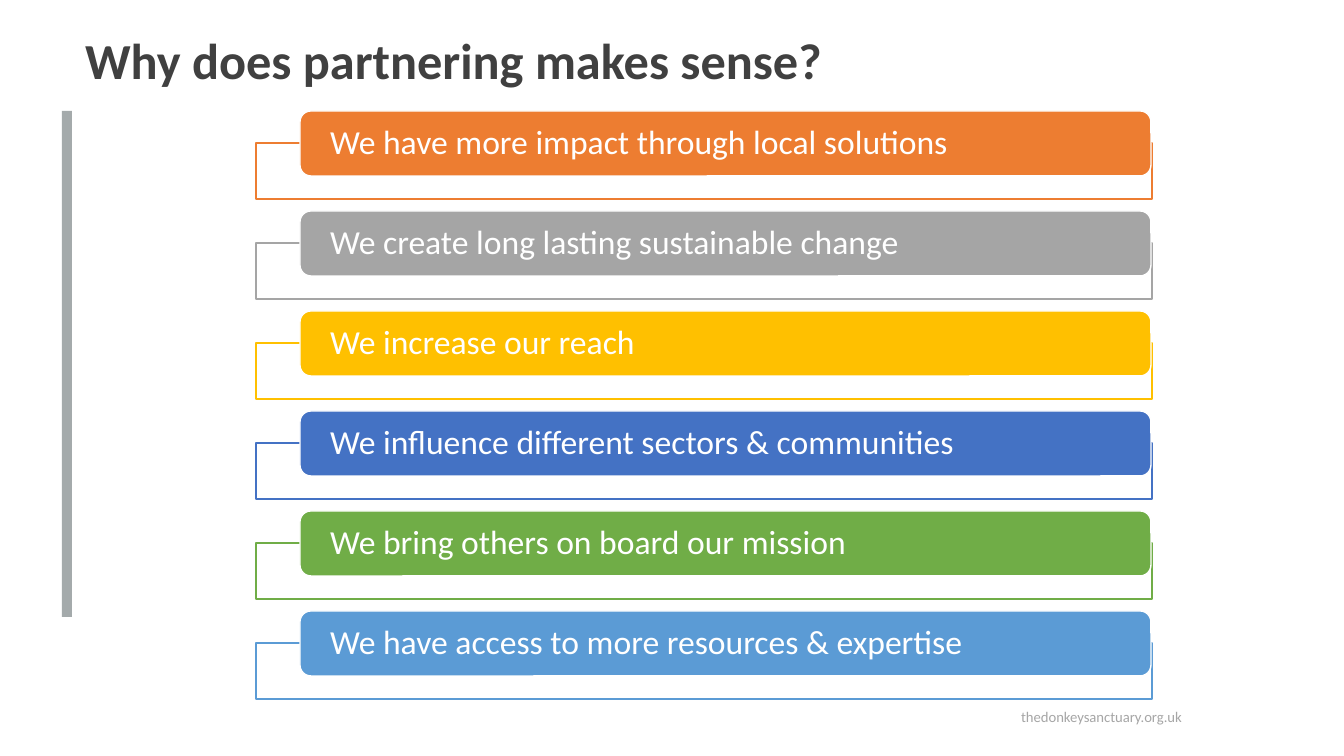
"""Build the slide of six colour-coded reasons for partnering."""
from dataclasses import dataclass

import pptx
import pptx.dml.color
import pptx.enum.shapes
import pptx.enum.text
import pptx.oxml
import pptx.oxml.ns
import pptx.util
from lxml import etree


@dataclass(frozen=True)
class Theme:
    font: str = "Calibri"
    title_size: int = 36
    reason_size: int = 24
    footer_size: float = 10.5
    title: str = "404040"
    footer: str = "A6A6A6"
    bar: str = "A4AAAB"
    white: str = "FFFFFF"
    accents: tuple = ("ED7D31", "A5A5A5", "FFC000", "4472C4", "70AD47", "5B9BD5")


theme = Theme()
EMU_PER_PX = 12192000 / 1344
REASONS = (
    "We have more impact through local solutions",
    "We create long lasting sustainable change",
    "We increase our reach",
    "We influence different sectors & communities",
    "We bring others on board our mission",
    "We have access to more resources & expertise",
)
FIRST_TOP, ROW_PITCH = 111, 100


def add_block(kind, box, fill, line=None):
    """Add a filled preset shape with a one-point outline or none."""
    shape = slide.shapes.add_shape(kind, *(round(length * EMU_PER_PX) for length in box))
    shape.shadow.inherit = False
    shape.fill.solid()
    shape.fill.fore_color.rgb = pptx.dml.color.RGBColor.from_string(fill)
    if line:
        shape.line.color.rgb = pptx.dml.color.RGBColor.from_string(line)
        shape.line.width = pptx.util.Pt(1)
    else:
        shape.line.fill.background()
    return shape


def write_text(shape, text, size, color, align, anchor, margins=(0, 0)):
    """Put one formatted paragraph into a shape."""
    frame = shape.text_frame
    frame.word_wrap = True
    frame.auto_size = pptx.enum.text.MSO_AUTO_SIZE.NONE
    frame.vertical_anchor = anchor
    frame.margin_left = frame.margin_right = round(margins[0] * EMU_PER_PX)
    frame.margin_top = frame.margin_bottom = round(margins[1] * EMU_PER_PX)
    paragraph = frame.paragraphs[0]
    paragraph.text = text
    paragraph.alignment = align
    paragraph.font.name = theme.font
    paragraph.font.size = pptx.util.Pt(size)
    paragraph.font.color.rgb = pptx.dml.color.RGBColor.from_string(color)
    return paragraph


SHAPES = pptx.enum.shapes.MSO_SHAPE
ALIGN = pptx.enum.text.PP_ALIGN
ANCHOR = pptx.enum.text.MSO_ANCHOR

presentation = pptx.Presentation()
presentation.slide_width = round(1344 * EMU_PER_PX)
presentation.slide_height = round(756 * EMU_PER_PX)
slide = presentation.slides.add_slide(presentation.slide_layouts[5])

add_block(SHAPES.RECTANGLE, (62, 111, 10, 506), theme.bar)

footer_box = (896, 708, 286, 18)
footer = slide.shapes.add_textbox(*(round(length * EMU_PER_PX) for length in footer_box))
write_text(footer, "thedonkeysanctuary.org.uk", theme.footer_size, theme.footer,
           ALIGN.RIGHT, ANCHOR.TOP)

title = slide.shapes.title
title.left, title.top, title.width, title.height = (
    round(length * EMU_PER_PX) for length in (85, 36, 1174, 92))
title_paragraph = write_text(title, "Why does partnering makes sense?", theme.title_size,
                             theme.title, ALIGN.LEFT, ANCHOR.TOP)
title_paragraph.font.bold = True
title_paragraph.line_spacing = 0.9

for row, (reason, accent) in enumerate(zip(REASONS, theme.accents)):
    top = FIRST_TOP + row * ROW_PITCH
    frame = add_block(SHAPES.RECTANGLE, (256, top + 32, 896, 56), theme.white, accent)
    fill_color = frame.fill._xPr.find(".//" + pptx.oxml.ns.qn("a:srgbClr"))
    etree.SubElement(fill_color, pptx.oxml.ns.qn("a:alpha"), val="90000")
    tab = add_block(SHAPES.ROUNDED_RECTANGLE, (300, top, 851, 65), accent, theme.white)
    reason_paragraph = write_text(tab, reason, theme.reason_size, theme.white,
                                  ALIGN.LEFT, ANCHOR.MIDDLE, (27, 3))
    reason_paragraph.line_spacing = 0.9

presentation.save("out.pptx")
